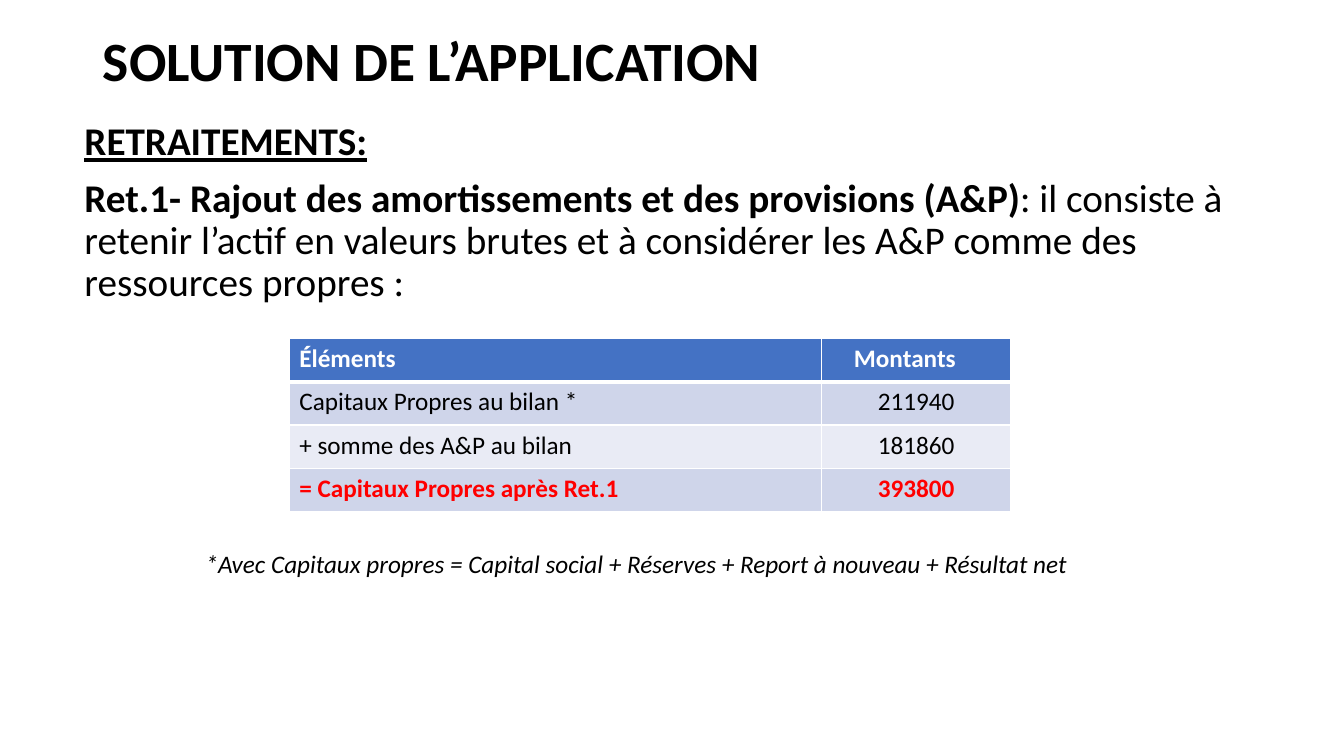
"""Build the slide showing the first restatement of the application."""
import pptx
import pptx.util
import pptx.dml.color
import pptx.enum.text
import pptx.oxml
from pptx.util import Cm


def color(code):
    return pptx.dml.color.RGBColor.from_string(code)


def add_span(para, text, size, code="000000", bold=False, italic=False, underline=False):
    span = para.add_run()
    span.text = text
    span.font.name = "Calibri"
    span.font.size = pptx.util.Pt(size)
    span.font.color.rgb = color(code)
    span.font.bold = bold
    span.font.italic = italic
    span.font.underline = underline


deck = pptx.Presentation()
deck.slide_width = Cm(33.87)
deck.slide_height = Cm(19.05)
page = deck.slides.add_slide(deck.slide_layouts[5])

title = page.shapes.title
title.left, title.top, title.width, title.height = Cm(2.34), Cm(1.02), Cm(29.21), Cm(1.14)
title.text_frame.auto_size = pptx.enum.text.MSO_AUTO_SIZE.NONE
title.text_frame.vertical_anchor = pptx.enum.text.MSO_ANCHOR.MIDDLE
para = title.text_frame.paragraphs[0]
para.alignment = pptx.enum.text.PP_ALIGN.LEFT
para.line_spacing = 0.9
add_span(para, "SOLUTION DE L’APPLICATION", 39.6, bold=True)

body = page.shapes.add_textbox(Cm(1.88), Cm(2.95), Cm(29.67), Cm(14.2))
body.text_frame.word_wrap = True
heading = body.text_frame.paragraphs[0]
add_span(heading, "RETRAITEMENTS:", 28, bold=True, underline=True)
explanation = body.text_frame.add_paragraph()
add_span(explanation, "Ret.1- Rajout des amortissements et des provisions (A&P)", 28, bold=True)
add_span(explanation, ": il consiste à retenir l’actif en valeurs brutes et à considérer "
         "les A&P comme des ressources propres :", 28)
for para in (heading, explanation):
    para.line_spacing = 0.9
    para.space_before = pptx.util.Pt(10)

rows = [
    ("Éléments", "Montants", "4472C4", "FFFFFF", True),
    ("Capitaux Propres au bilan *", "211940", "CFD5EA", "000000", False),
    ("+ somme des A&P au bilan", "181860", "E9EBF5", "000000", False),
    ("= Capitaux Propres après Ret.1", "393800", "CFD5EA", "FF0000", True),
]
row_height = Cm(1.09)
table = page.shapes.add_table(len(rows), 2, Cm(7.29), Cm(8.53), Cm(18.19),
                              row_height * len(rows)).table
table.columns[0].width = Cm(13.41)
table.columns[1].width = Cm(4.78)
for r, (label, amount, fill, ink, bold) in enumerate(rows):
    table.rows[r].height = row_height
    for c, text in enumerate((label, amount)):
        cell = table.cell(r, c)
        properties = cell._tc.get_or_add_tcPr()
        for side in "LRTB":
            thick = (r, side) in ((0, "B"), (1, "T"))
            properties.append(pptx.oxml.parse_xml(
                f'<a:ln{side} xmlns:a="http://schemas.openxmlformats.org/drawingml/2006/main" '
                f'w="{38100 if thick else 12700}"><a:solidFill><a:srgbClr val="FFFFFF"/>'
                f'</a:solidFill></a:ln{side}>'))
        cell.fill.solid()
        cell.fill.fore_color.rgb = color(fill)
        para = cell.text_frame.paragraphs[0]
        if c == 1 and r > 0:
            para.alignment = pptx.enum.text.PP_ALIGN.CENTER
        add_span(para, text, 18, ink, bold)
table.cell(0, 1).margin_left = Cm(0.82)

note = page.shapes.add_textbox(Cm(4.93), Cm(13.69), Cm(23.44), Cm(1.02))
note.text_frame.word_wrap = True
note.text_frame.auto_size = pptx.enum.text.MSO_AUTO_SIZE.SHAPE_TO_FIT_TEXT
add_span(note.text_frame.paragraphs[0], "*Avec Capitaux propres = Capital social + Réserves + "
         "Report à nouveau + Résultat net", 18, italic=True)

deck.save("out.pptx")
